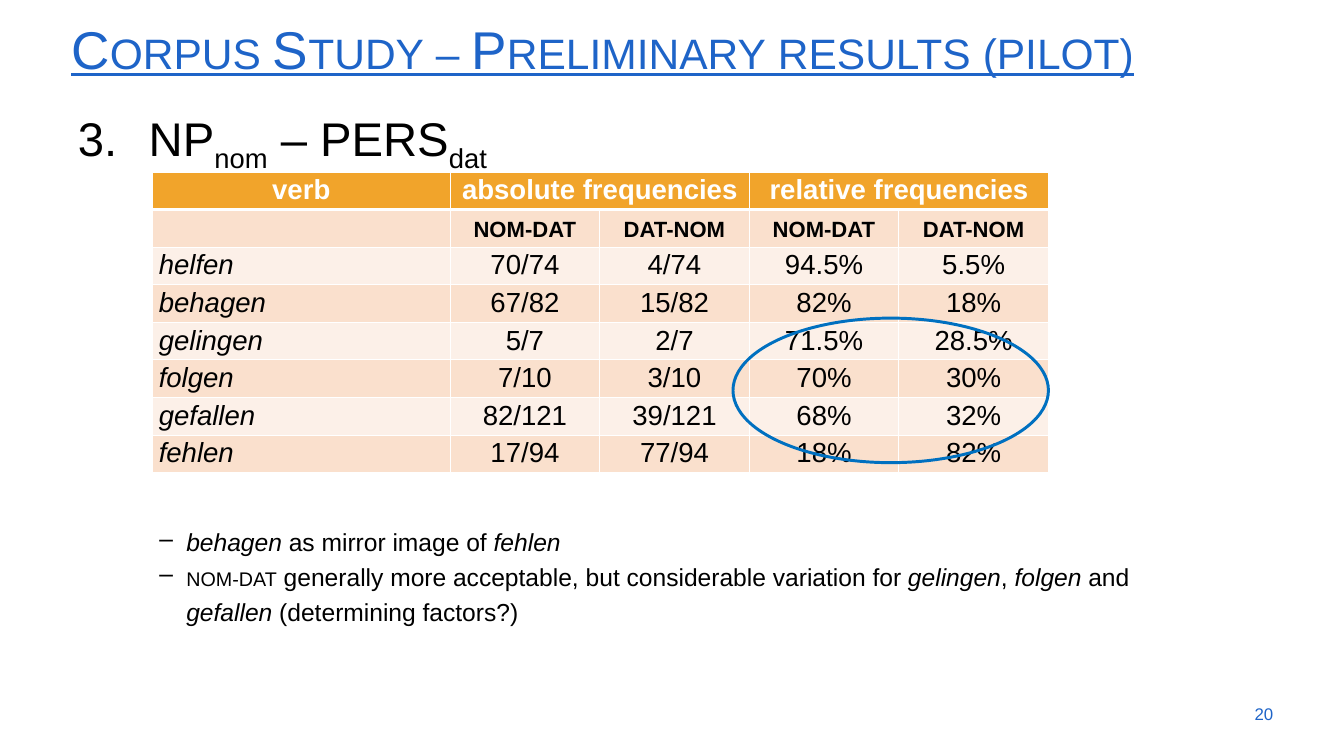
import typing

import lxml.etree
import pptx
import pptx.dml.color
import pptx.enum.shapes
import pptx.enum.text
import pptx.oxml.ns
import pptx.util

Inches = pptx.util.Inches
Pt = pptx.util.Pt
RGB = pptx.dml.color.RGBColor
ALIGN = pptx.enum.text.PP_ALIGN
qn = pptx.oxml.ns.qn

BLUE = RGB(0x1E, 0x64, 0xC8)
RING = RGB(0x00, 0x70, 0xC0)
BLACK = RGB(0x00, 0x00, 0x00)
WHITE = RGB(0xFF, 0xFF, 0xFF)
GOLD = RGB(0xF1, 0xA4, 0x2B)
PEACH = RGB(0xFA, 0xE0, 0xCD)
CREAM = RGB(0xFC, 0xF0, 0xE8)

SLANT = {"italic": True}
SMALL = {"cap": "small"}
LOW = {"baseline": "-25000"}
XML_KEYS = ("cap", "baseline")


class Bit(typing.NamedTuple):
    text: str
    look: dict = {}


class Line(typing.NamedTuple):
    bits: list[Bit]
    align: ALIGN = ALIGN.LEFT
    space: float = 1.0
    indent: float = 0
    left: float = 0
    mark: tuple[str, dict] | None = None


class Box(typing.NamedTuple):
    place: tuple[float, float, float, float]
    size: float
    color: RGB
    lines: list[Line]


BOXES = [
    Box((0.91, 0.28, 17.18, 0.94), 54, BLUE, [
        Line([Bit("Corpus Study – Preliminary results (pilot)", {"underline": True, **SMALL})],
             space=0.9)]),
    Box((0.91, 1.31, 17.17, 7.32), 48, BLACK, [
        Line([Bit("NP"), Bit("nom", LOW), Bit(" – PERS"), Bit("dat", LOW)],
             space=1.2, indent=-1, left=1.09,
             mark=("a:buAutoNum", {"type": "arabicPeriod", "startAt": "3"}))]),
    Box((17.05, 9.88, 1.01, 0.4), 17.1, BLUE, [
        Line([Bit("20")], ALIGN.RIGHT)]),
    Box((2.15, 7.3, 14.79, 1.57), 25, BLACK, [
        Line(bits, space=1.2, indent=-0.38, left=0.38, mark=("a:buChar", {"char": "–"}))
        for bits in (
            [Bit("behagen", SLANT), Bit(" as mirror image of "), Bit("fehlen", SLANT)],
            [Bit("nom-dat", SMALL),
             Bit(" generally more acceptable, but considerable variation for "),
             Bit("gelingen", SLANT), Bit(", "), Bit("folgen ", SLANT), Bit("and "),
             Bit("gefallen", SLANT), Bit(" (determining factors?)")],
        )]),
]

HEAD = ["verb", "absolute frequencies", "", "relative frequencies", ""]
ROWS = [
    HEAD,
    ["", "nom-dat", "dat-nom", "nom-dat", "dat-nom"],
    ["helfen", "70/74", "4/74", "94.5%", "5.5%"],
    ["behagen", "67/82", "15/82", "82%", "18%"],
    ["gelingen", "5/7", "2/7", "71.5%", "28.5%"],
    ["folgen", "7/10", "3/10", "70%", "30%"],
    ["gefallen", "82/121", "39/121", "68%", "32%"],
    ["fehlen", "17/94", "77/94", "18%", "82%"],
]
WIDTHS = [4.2] + [2.11] * 4
ROW_HIGH = 0.53


def add_bits(para, bits: list[Bit], size: float, color: RGB) -> None:
    for bit in bits:
        run = para.add_run()
        run.text = bit.text
        run.font.color.rgb = color
        for key, value in {"name": "Arial", "size": Pt(size), **bit.look}.items():
            if key in XML_KEYS:
                run._r.get_or_add_rPr().set(key, value)
            else:
                setattr(run.font, key, value)


def add_box(slide, box: Box) -> None:
    frame = slide.shapes.add_textbox(*map(Inches, box.place)).text_frame
    frame.word_wrap = True
    for i, line in enumerate(box.lines):
        para = frame.add_paragraph() if i else frame.paragraphs[0]
        para.alignment = line.align
        para.line_spacing = line.space
        if line.mark:
            props = para._p.get_or_add_pPr()
            props.set("marL", str(Inches(line.left)))
            props.set("indent", str(Inches(line.indent)))
            tag, attrs = line.mark
            lxml.etree.SubElement(props, qn(tag), attrs)
        add_bits(para, line.bits, box.size, box.color)


def add_edges(cell, base: float) -> None:
    """Draw white cell borders, the bottom one with its own width."""
    props = cell._tc.get_or_add_tcPr()
    for side, width in {"L": 1, "R": 1, "T": 1, "B": base}.items():
        edge = lxml.etree.SubElement(props, qn(f"a:ln{side}"), w=str(Pt(width)))
        fill = lxml.etree.SubElement(edge, qn("a:solidFill"))
        lxml.etree.SubElement(fill, qn("a:srgbClr"), val=str(WHITE))


def add_grid(slide) -> None:
    table = slide.shapes.add_table(
        len(ROWS), len(WIDTHS), Inches(2.15), Inches(2.43),
        Inches(sum(WIDTHS)), Inches(ROW_HIGH * len(ROWS))).table
    for col, width in zip(table.columns, WIDTHS):
        col.width = Inches(width)
    pad = {"margin_left": Inches(0.09), "margin_right": Inches(0.09),
           "margin_top": Inches(0.04), "margin_bottom": Inches(0.02)}
    for r, row in enumerate(ROWS):
        table.rows[r].height = Inches(ROW_HIGH)
        for c, text in enumerate(row):
            cell = table.cell(r, c)
            for key, value in pad.items():
                setattr(cell, key, value)
            add_edges(cell, 1 if r else 3)
            cell.fill.solid()
            cell.fill.fore_color.rgb = (PEACH if r % 2 else CREAM) if r else GOLD
            if not text:
                continue
            look = {"bold": r < 2, "italic": r > 1 and c == 0}
            if r == 1:
                look |= SMALL
            para = cell.text_frame.paragraphs[0]
            para.alignment = ALIGN.LEFT if look["italic"] else ALIGN.CENTER
            add_bits(para, [Bit(text, look)], 28, BLACK if r else WHITE)
    for c in (1, 3):
        table.cell(0, c).merge(table.cell(0, c + 1))


def add_ring(slide) -> None:
    ring = slide.shapes.add_shape(
        pptx.enum.shapes.MSO_SHAPE.OVAL, *map(Inches, (10.34, 4.49, 4.45, 2.04)))
    ring.shadow.inherit = False
    ring.fill.background()
    ring.line.color.rgb = RING
    ring.line.width = Pt(3)


def main() -> None:
    deck = pptx.Presentation()
    deck.slide_width = Inches(18.96)
    deck.slide_height = Inches(10.67)
    slide = deck.slides.add_slide(deck.slide_layouts[6])
    for box in BOXES:
        add_box(slide, box)
    add_grid(slide)
    add_ring(slide)
    deck.save("out.pptx")


if __name__ == "__main__":
    main()
